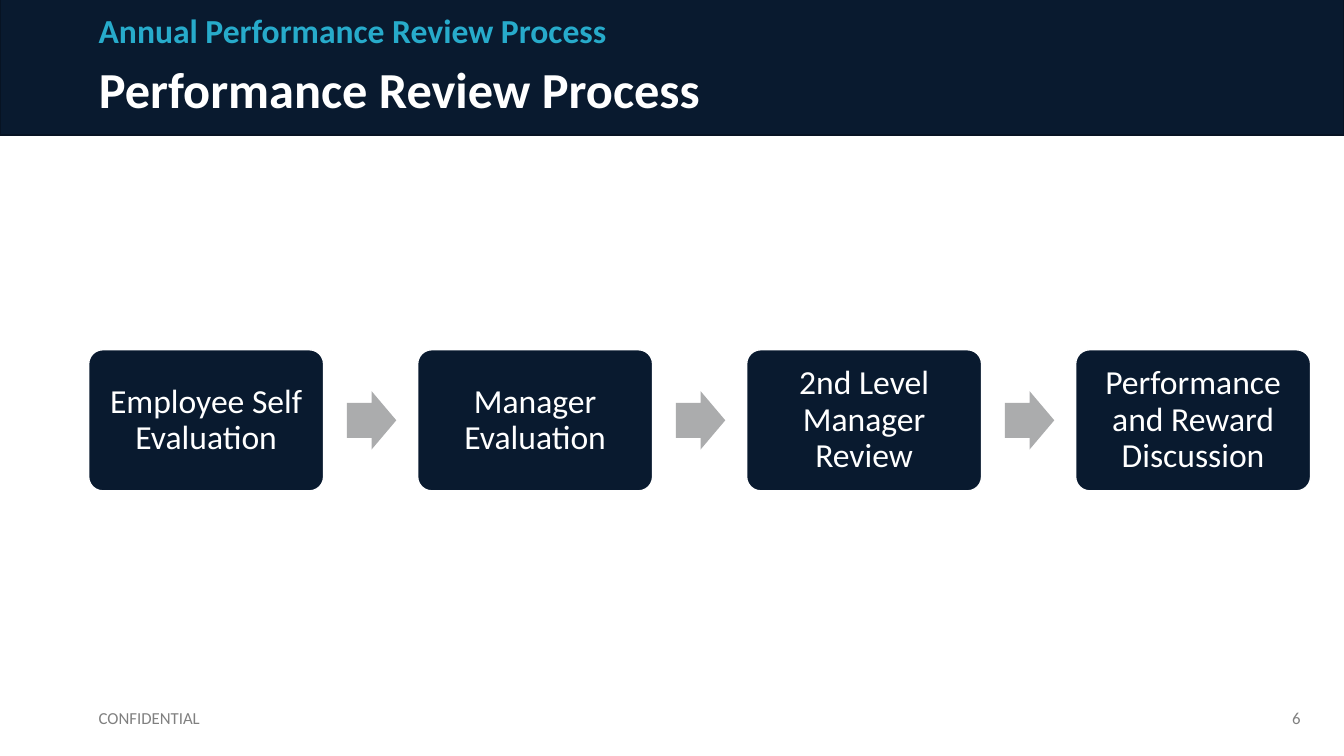
from dataclasses import dataclass

from pptx import Presentation
from pptx.dml.color import RGBColor
from pptx.enum import shapes, text
from pptx.util import Inches, Pt


@dataclass(frozen=True)
class Theme:
    font: str = "Calibri"
    navy: str = "091A2F"
    band_line: str = "071323"
    teal: str = "27ABCB"
    arrow: str = "ABACAD"
    muted: str = "808080"
    white: str = "FFFFFF"
    title_size: int = 36
    body_size: int = 24
    footer_size: int = 12


@dataclass(frozen=True)
class Box:
    left: float
    top: float
    width: float
    height: float

    def lengths(self) -> tuple:
        return tuple(Inches(v) for v in (self.left, self.top, self.width, self.height))


@dataclass(frozen=True)
class TextStyle:
    size: int
    color: str
    bold: bool = False
    align: text.PP_ALIGN = text.PP_ALIGN.LEFT
    anchor: text.MSO_ANCHOR = text.MSO_ANCHOR.MIDDLE
    line_spacing: float = 1.0


THEME = Theme()
MARGIN = 0.88
STEPS = (
    "Employee Self Evaluation",
    "Manager Evaluation",
    "2nd Level Manager Review",
    "Performance and Reward Discussion",
)
FIRST_STEP = Box(MARGIN, 3.47, 2.33, 1.4)
FIRST_ARROW = Box(3.44, 3.88, 0.49, 0.58)
STEP_PITCH = 3.263


def write(shape, words: str, style: TextStyle, inset: float | None = None) -> None:
    frame = shape.text_frame
    frame.text = words
    frame.word_wrap = True
    frame.auto_size = text.MSO_AUTO_SIZE.NONE
    frame.vertical_anchor = style.anchor
    if inset is not None:
        frame.margin_left = frame.margin_right = Inches(inset)
        frame.margin_top = frame.margin_bottom = Inches(inset)
    paragraph = frame.paragraphs[0]
    paragraph.alignment = style.align
    paragraph.line_spacing = style.line_spacing
    font = paragraph.runs[0].font
    font.name = THEME.font
    font.size = Pt(style.size)
    font.bold = style.bold
    font.color.rgb = RGBColor.from_string(style.color)


def add_text(slide, box: Box, words: str, style: TextStyle) -> None:
    write(slide.shapes.add_textbox(*box.lengths()), words, style)


def add_block(slide, kind: shapes.MSO_SHAPE, box: Box, fill: str,
              line: str | None = None, adjustments: tuple = ()):
    shape = slide.shapes.add_shape(kind, *box.lengths())
    shape.shadow.inherit = False
    shape.fill.solid()
    shape.fill.fore_color.rgb = RGBColor.from_string(fill)
    if line:
        shape.line.color.rgb = RGBColor.from_string(line)
        shape.line.width = Pt(1)
    else:
        shape.line.fill.background()
    for index, value in enumerate(adjustments):
        shape.adjustments[index] = value
    return shape


def add_header(slide) -> None:
    band = add_block(slide, shapes.MSO_SHAPE.RECTANGLE, Box(0, -0.01, 13.33, 1.35),
                     THEME.navy, THEME.band_line)
    title = slide.shapes.title
    title.element.addprevious(band.element)  # band sits behind the title
    title.left, title.top, title.width, title.height = Box(MARGIN, 0.53, 12.12, 0.8).lengths()
    write(title, "Performance Review Process",
          TextStyle(THEME.title_size, THEME.white, bold=True, line_spacing=0.8))
    add_text(slide, Box(MARGIN, 0.07, 12.12, 0.48), "Annual Performance Review Process",
             TextStyle(THEME.body_size, THEME.teal, bold=True,
                       anchor=text.MSO_ANCHOR.BOTTOM, line_spacing=0.9))


def add_process(slide) -> None:
    style = TextStyle(THEME.body_size, THEME.white, align=text.PP_ALIGN.CENTER,
                      line_spacing=0.9)
    for index, label in enumerate(STEPS):
        offset = index * STEP_PITCH
        step = Box(FIRST_STEP.left + offset, FIRST_STEP.top,
                   FIRST_STEP.width, FIRST_STEP.height)
        card = add_block(slide, shapes.MSO_SHAPE.ROUNDED_RECTANGLE, step,
                         THEME.navy, THEME.white, (0.1,))
        write(card, label, style, inset=0.1)
        if index < len(STEPS) - 1:
            arrow = Box(FIRST_ARROW.left + offset, FIRST_ARROW.top,
                        FIRST_ARROW.width, FIRST_ARROW.height)
            add_block(slide, shapes.MSO_SHAPE.RIGHT_ARROW, arrow, THEME.arrow,
                      adjustments=(0.6, 0.5))


def add_footer(slide) -> None:
    add_text(slide, Box(MARGIN, 6.92, 4.5, 0.4), "CONFIDENTIAL",
             TextStyle(THEME.footer_size, THEME.muted))
    add_text(slide, Box(10, 6.92, 3, 0.4), "6",
             TextStyle(THEME.footer_size, THEME.muted, align=text.PP_ALIGN.RIGHT))


def main() -> None:
    presentation = Presentation()
    presentation.slide_width = Inches(13.33)
    presentation.slide_height = Inches(7.5)
    slide = presentation.slides.add_slide(presentation.slide_layouts[5])
    add_header(slide)
    add_process(slide)
    add_footer(slide)
    presentation.save("out.pptx")


if __name__ == "__main__":
    main()
